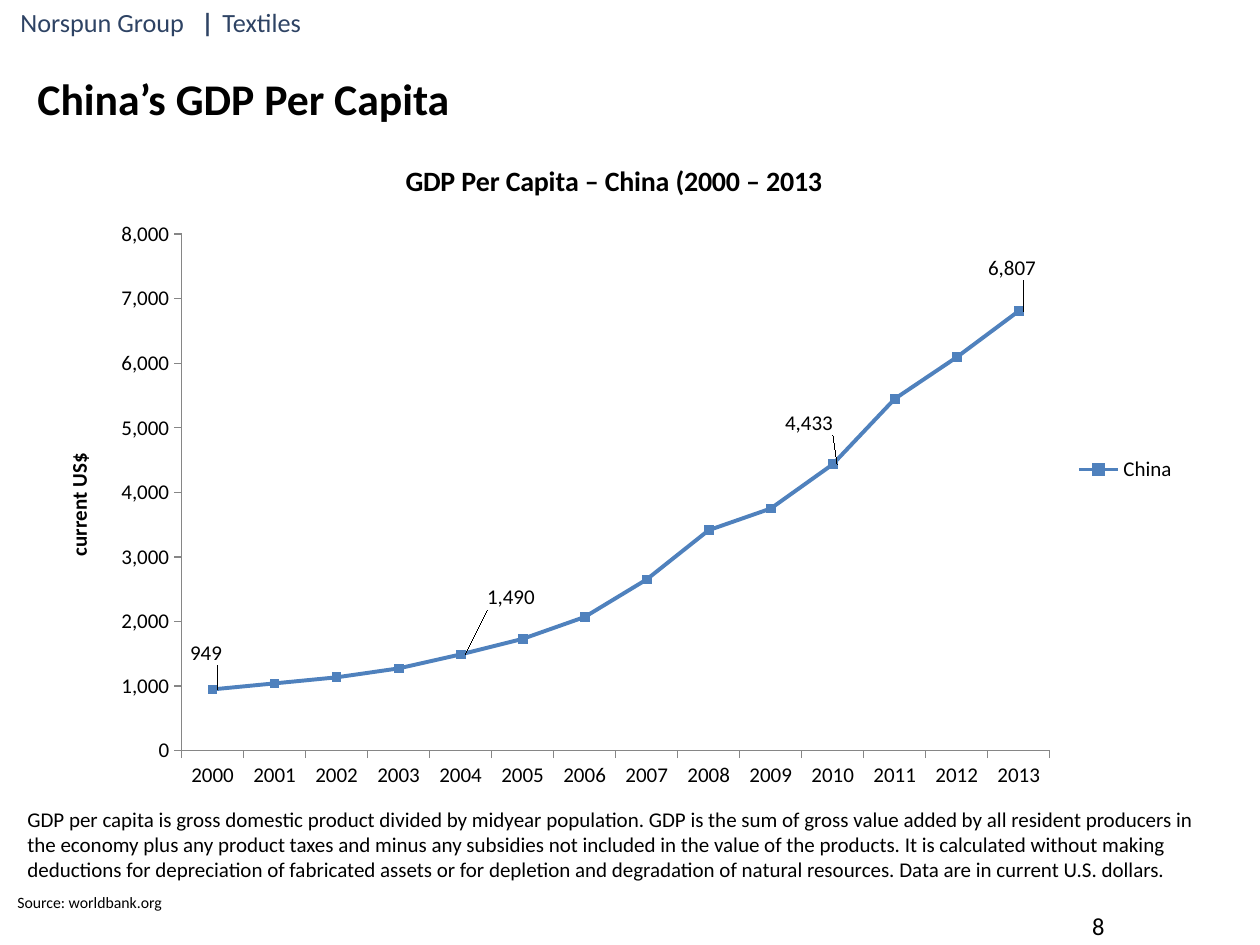
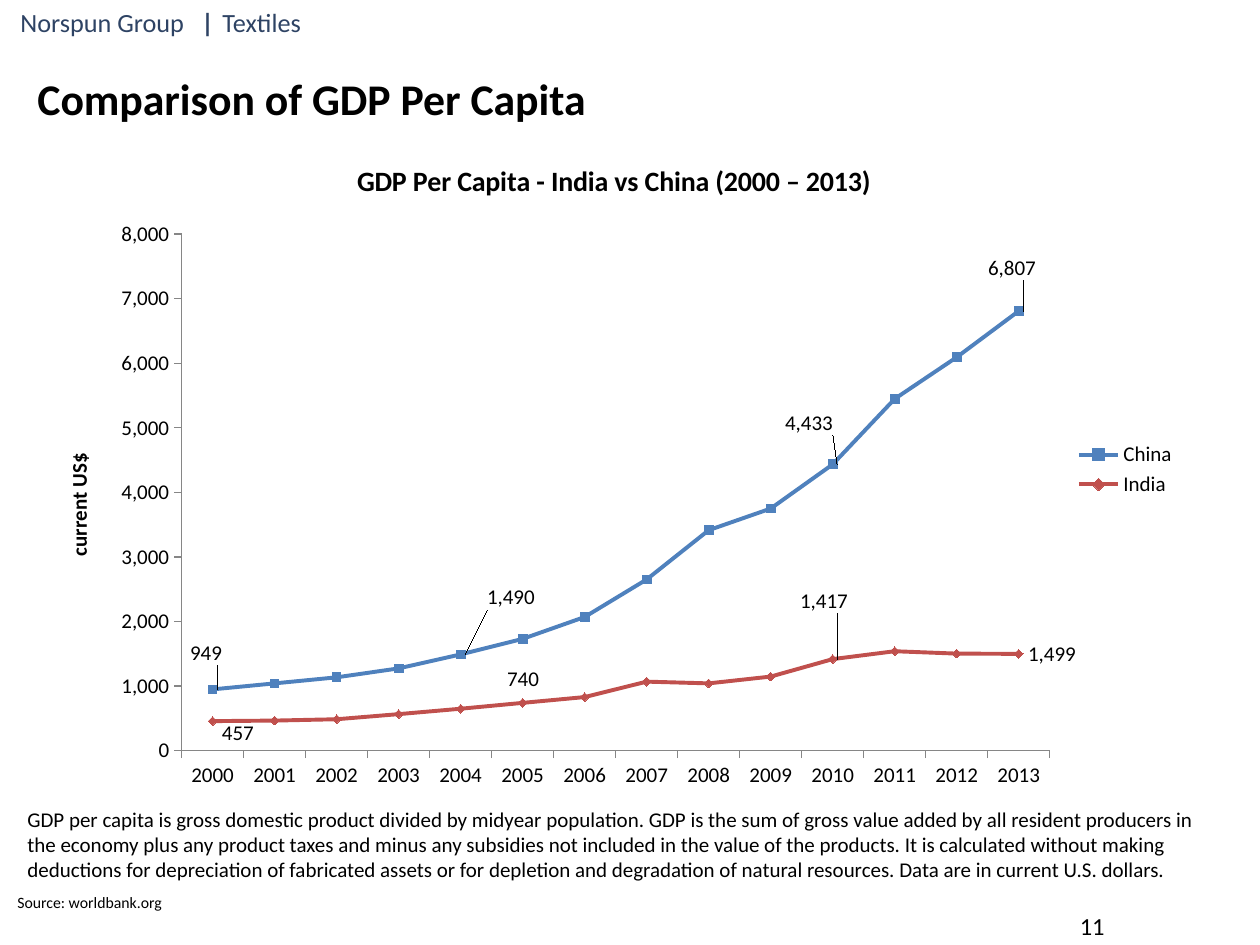
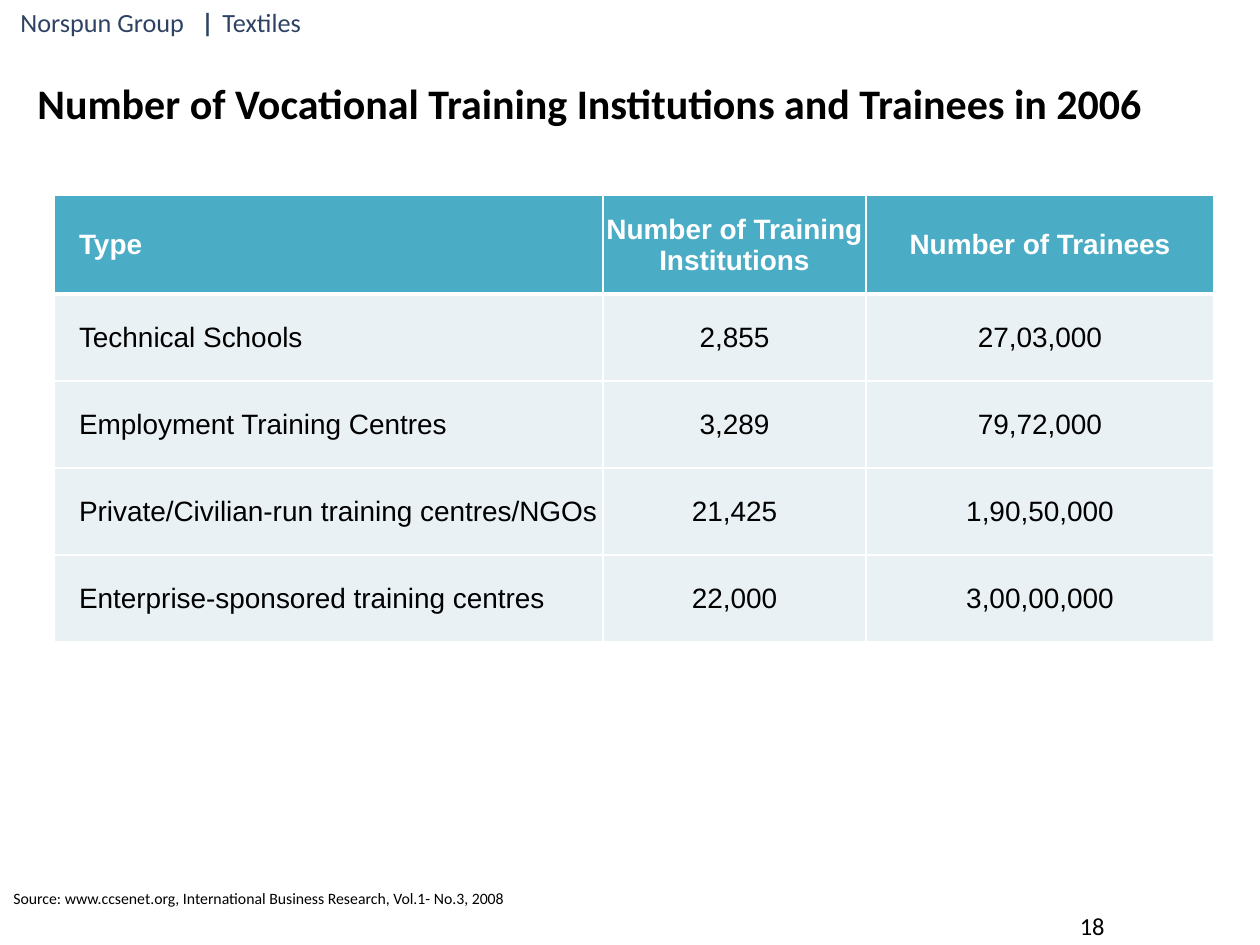
from lxml import etree
from pptx import Presentation
from pptx.chart.data import CategoryChartData
from pptx.dml.color import RGBColor
from pptx.enum.chart import XL_CHART_TYPE, XL_LABEL_POSITION, XL_LEGEND_POSITION, XL_MARKER_STYLE
from pptx.enum.text import MSO_ANCHOR, PP_ALIGN
from pptx.oxml.ns import qn
from pptx.util import Emu, Pt

LEFT, CENTER, RIGHT = PP_ALIGN.LEFT, PP_ALIGN.CENTER, PP_ALIGN.RIGHT
TOP, MIDDLE = MSO_ANCHOR.TOP, MSO_ANCHOR.MIDDLE
LINE = XL_CHART_TYPE.LINE_MARKERS
BESIDE = XL_LABEL_POSITION.RIGHT
SQUARE, DIAMOND = XL_MARKER_STYLE.SQUARE, XL_MARKER_STYLE.DIAMOND
SCALE = 914400 / 126
BLACK, WHITE, NAVY, GREY = "000000", "FFFFFF", "2E4364", "868686"
HEAD, BODY = "4BACC6", "E9F1F5"
SANS, GRID = "Calibri", "Arial"

NOTE = (
    "GDP per capita is gross domestic product divided by midyear population. "
    "GDP is the sum of gross value added by all resident producers in the economy "
    "plus any product taxes and minus any subsidies not included in the value of the "
    "products. It is calculated without making deductions for depreciation of "
    "fabricated assets or for depletion and degradation of natural resources. "
    "Data are in current U.S. dollars."
)
YEARS = [str(year) for year in range(2000, 2014)]
CHART_BOX = (39, 137, 1150, 665)
# Shifts move a value label, in px, from its place beside the point.
CHINA = {
    "name": "China", "color": "4F81BD", "mark": SQUARE,
    "vals": [949.2, 1041.6, 1135.4, 1273.6, 1490.4, 1731.1, 2069.3,
             2651.3, 3413.6, 3748.5, 4433.3, 5447.3, 6092.8, 6807.4],
    "shifts": {0: (-32, -36), 4: (17, -57), 10: (-57, -41), 13: (-40, -43)},
}
INDIA = {
    "name": "India", "color": "C0504D", "mark": DIAMOND,
    "vals": [457.3, 466.2, 486.6, 565.3, 649.7, 740.1, 830.2,
             1068.7, 1042.1, 1147.2, 1417.1, 1539.6, 1503, 1498.9],
    "shifts": {0: (0, 12), 5: (-25, -24), 10: (-42, -58), 13: (0, 0)},
}
TRAINING = [
    ("Type", "Number of Training Institutions", "Number of Trainees"),
    ("Technical Schools", "2,855", "27,03,000"),
    ("Employment Training Centres", "3,289", "79,72,000"),
    ("Private/Civilian-run training centres/NGOs", "21,425", "1,90,50,000"),
    ("Enterprise-sponsored training centres", "22,000", "3,00,00,000"),
]


def px(n):
    return Emu(round(n * SCALE))


def rgb(color):
    return RGBColor.from_string(color)


def style(font, size, color=BLACK, bold=False, name=SANS):
    font.size, font.bold, font.name = Pt(size), bold, name
    font.color.rgb = rgb(color)


def add_text(slide, box, text, size, color=BLACK, bold=False, align=LEFT, anchor=TOP):
    frame = slide.shapes.add_textbox(*map(px, box)).text_frame
    frame.word_wrap = True
    frame.vertical_anchor = anchor
    frame.text = text
    para = frame.paragraphs[0]
    para.alignment = align
    style(para.font, size, color, bold)
    return para


def add_brand(slide, box):
    para = add_text(slide, box, "", 15, NAVY)
    tabs = etree.Element(qn("a:tabLst"))
    for stop in (181, 202):
        etree.SubElement(tabs, qn("a:tab"), pos=str(px(stop)), algn="l")
    para._p.get_or_add_pPr().insert(0, tabs)
    for text, bold in (("Norspun Group\t", False), ("|\t", True), ("Textiles", False)):
        run = para.add_run()
        run.text = text
        style(run.font, 15, NAVY, bold)


def add_page(deck, number, title, source, top=66, size=25, foot=(5, 887, 200, 32)):
    """Add a slide with the brand line, title, source and page number."""
    slide = deck.slides.add_slide(deck.slide_layouts[6])
    add_brand(slide, (8, 0, 309, 44))
    add_text(slide, (823, 901, 294, 50), str(number), 14, align=RIGHT, anchor=MIDDLE)
    add_text(slide, (25, top, 1201, 84), title, size, bold=True)
    add_text(slide, foot, source, 9)
    return slide


def make_layout(**parts):
    """Return a manual chart layout, with fractions of the chart's size."""
    layout = etree.Element(qn("c:layout"))
    manual = etree.SubElement(layout, qn("c:manualLayout"))
    for key, val in parts.items():
        etree.SubElement(manual, qn("c:" + key), val=str(val))
    return layout


def style_series(line, data, wide, high):
    color = rgb(data["color"])
    line.smooth = False
    line.format.line.width = Pt(2.25)
    line.format.line.color.rgb = color
    mark = line.marker
    mark.style, mark.size = data["mark"], 5
    mark.format.fill.solid()
    mark.format.fill.fore_color.rgb = color
    mark.format.line.color.rgb = color
    line.data_labels.show_value = False
    for index, (dx, dy) in data["shifts"].items():
        line.points[index].data_label.position = BESIDE
    labels = line.data_labels._element
    for label in labels.findall(qn("c:dLbl")):
        dx, dy = data["shifts"][int(label.find(qn("c:idx")).get("val"))]
        label.insert(1, make_layout(x=round(dx / wide, 4), y=round(dy / high, 4)))
    for lead in labels.findall(qn("c:showLeaderLines")):
        labels.remove(lead)


def style_axes(chart):
    for axis in (chart.category_axis, chart.value_axis):
        axis.has_major_gridlines = False
        axis.format.line.color.rgb = rgb(GREY)
        axis.format.line.width = Pt(0.75)
    scale = chart.value_axis
    scale.minimum_scale, scale.maximum_scale, scale.major_unit = 0, 8000, 1000
    scale.tick_labels.number_format = "#,##0"
    scale.tick_labels.number_format_is_linked = False
    frame = scale.axis_title.text_frame
    frame.text = "current US$"
    style(frame.paragraphs[0].runs[0].font, 12, bold=True)


def add_lines(slide, box, title, lines):
    data = CategoryChartData(number_format="#,##0")
    data.categories = YEARS
    for line in lines:
        data.add_series(line["name"], line["vals"])
    chart = slide.shapes.add_chart(LINE, *map(px, box), data).chart
    style(chart.font, 12)
    chart.has_title = True
    chart.chart_title.text_frame.text = title
    style(chart.chart_title.text_frame.paragraphs[0].runs[0].font, 16, bold=True)
    chart.has_legend = True
    chart.legend.position = XL_LEGEND_POSITION.RIGHT
    chart.legend.include_in_layout = False
    style_axes(chart)
    plot = chart.plots[0]
    plot.vary_by_categories = False
    for line, look in zip(plot.series, lines):
        style_series(line, look, box[2], box[3])
    area = chart._chartSpace.find(".//" + qn("c:plotArea"))
    for old in area.findall(qn("c:layout")):
        area.remove(old)
    area.insert(0, make_layout(layoutTarget="inner", xMode="edge", yMode="edge",
                               x=0.124, y=0.146, w=0.755, h=0.777))


def add_gdp(deck, number, title, heading, lines):
    slide = add_page(deck, number, title, "Source: worldbank.org")
    add_lines(slide, CHART_BOX, heading, lines)
    add_text(slide, (15, 800, 1201, 90), NOTE, 12)


def set_border(cell, side, width):
    edge = etree.SubElement(cell._tc.get_or_add_tcPr(), qn("a:ln" + side), w=str(Pt(width)))
    fill = etree.SubElement(edge, qn("a:solidFill"))
    etree.SubElement(fill, qn("a:srgbClr"), val=WHITE)


def fill_cell(cell, text, row, col):
    head = row == 0
    widths = {"L": 1, "R": 1, "T": 3 if row == 1 else 1, "B": 3 if head else 1}
    for side, width in widths.items():
        set_border(cell, side, width)
    cell.fill.solid()
    cell.fill.fore_color.rgb = rgb(HEAD if head else BODY)
    cell.margin_left = cell.margin_right = cell.margin_top = px(1)
    cell.margin_bottom = 0
    cell.vertical_anchor = MIDDLE
    cell.text = text
    para = cell.text_frame.paragraphs[0]
    if col == 0:
        para._p.get_or_add_pPr().set("marL", str(px(24)))
    else:
        para.alignment = CENTER
    style(para.runs[0].font, 16, WHITE if head else BLACK, head, GRID)


def add_grid(slide, box, rows, widths, heights):
    table = slide.shapes.add_table(len(rows), len(widths), *map(px, box)).table
    for col, width in zip(table.columns, widths):
        col.width = px(width)
    for row, height in zip(table.rows, heights):
        row.height = px(height)
    for r, row in enumerate(rows):
        for c, text in enumerate(row):
            fill_cell(table.cell(r, c), text, r, c)


def add_training(deck):
    slide = add_page(deck, 18, "Number of Vocational Training Institutions and Trainees in 2006",
                     "Source: www.ccsenet.org, International Business Research, Vol.1- No.3, 2008",
                     top=71, size=24, foot=(1, 883, 1105, 32))
    add_grid(slide, (54, 195, 1160, 447), TRAINING, (549, 263, 348), [99] + [87] * 4)


def main():
    deck = Presentation()
    deck.slide_width, deck.slide_height = px(1260), px(945)
    add_gdp(deck, 8, "China’s GDP Per Capita", "GDP Per Capita – China (2000 – 2013", [CHINA])
    add_gdp(deck, 11, "Comparison of GDP Per Capita",
            "GDP Per Capita - India vs China (2000 – 2013)", [CHINA, INDIA])
    add_training(deck)
    deck.save("out.pptx")


if __name__ == "__main__":
    main()
